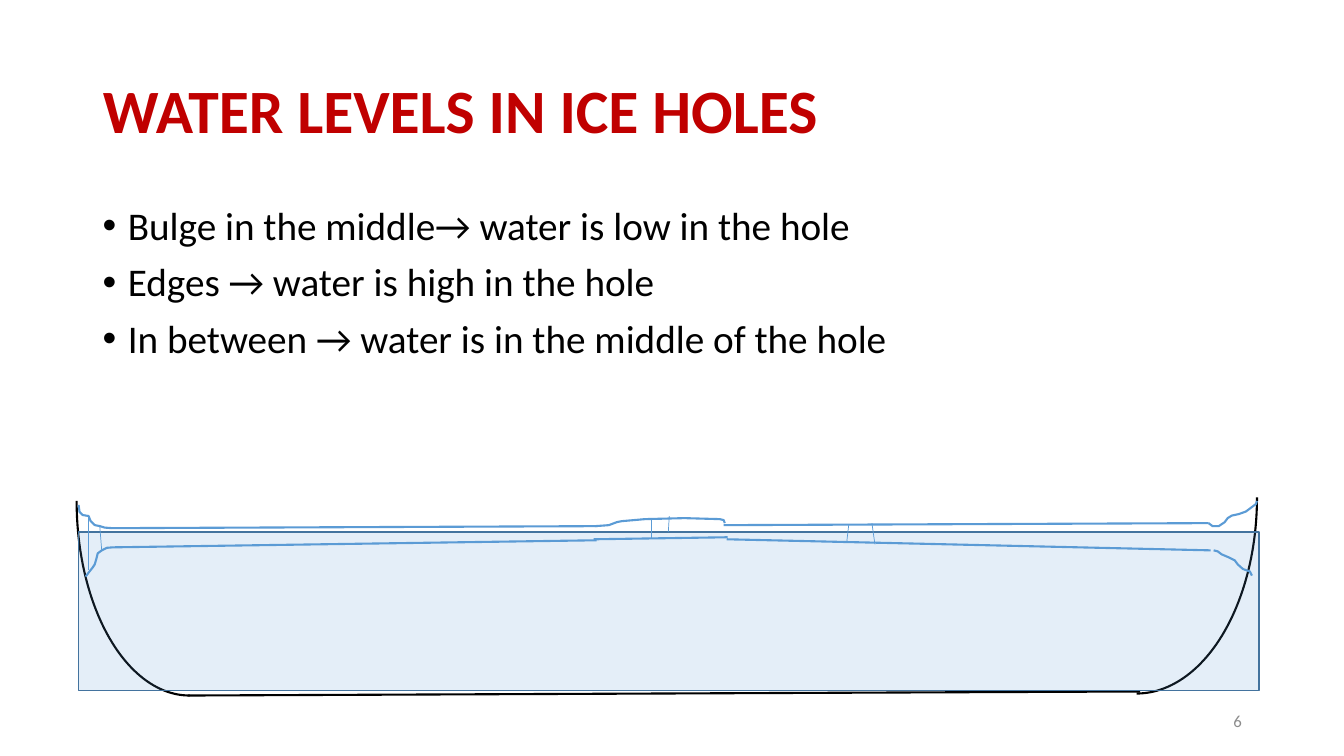
from dataclasses import dataclass

from lxml import etree
from pptx import Presentation, util as u
from pptx.dml.color import RGBColor
from pptx.enum import shapes, text
from pptx.oxml.ns import qn

COLORS = {"title": "C00000", "ink": "000000", "number": "8C8C8C",
          "ice": "5B9BD5", "water_edge": "43739E"}
FONT = "Calibri"
CELL = u.Inches(0.1)  # grid of 0.1 inch columns and rows

Point = tuple[float, float]
Box = tuple[float, float, float, float]


@dataclass
class Arc:
    box: Box
    rotation: int


@dataclass
class Line:
    start: Point
    end: Point
    color: str = "ice"
    weight: float = 1.5


@dataclass
class Outline:
    points: list[Point]


TITLE_BOX: Box = (9.2, 4, 115, 14.5)
BODY_BOX: Box = (9.2, 20, 115, 47.6)
NUMBER_BOX: Box = (94.2, 69.5, 30, 4)
WATER_BOX: Box = (7.8, 52.8, 117.1, 15.7)

BULLETS = ["Bulge in the middle→ water is low in the hole",
           "Edges → water is high in the hole",
           "In between → water is in the middle of the hole"]

BANKS = [Arc((7.6, 30.4, 22.4, 38.6), 180), Arc((93.3, 37.4, 38.9, 23.9), 90)]
LAKE_BED = Line((18.7, 69), (113.1, 68.6), "ink")

ICE_LINES = [
    Line((11.1, 52.4), (59.2, 52.2)), Line((11.2, 54.3), (59.2, 53.6)),
    Line((71.8, 52.1), (119.9, 51.9)), Line((72.1, 53.5), (120.1, 54.6)),
    Line((58.9, 53.5), (72.2, 53.3)),
]
ICE_OUTLINES = [
    # Left edge, top and underside
    Outline([(7.8, 50.1), (7.9, 50.8), (8.2, 51.1), (8.8, 51.2), (9, 51.7),
             (9.4, 52.1), (9.9, 52.2), (10.4, 52.35), (11.1, 52.4)]),
    Outline([(8.5, 57.2), (8.8, 56.8), (9.2, 56.3), (9.4, 56), (9.55, 55.5),
             (9.7, 54.9), (10.1, 54.6), (10.6, 54.35), (11.2, 54.3)]),
    # Right edge, top and underside
    Outline([(119.9, 51.9), (120.3, 52.2), (120.9, 52.2), (121.5, 51.8),
             (121.8, 51.4), (122.2, 51.15), (122.9, 51), (123.6, 50.75),
             (124.2, 50.3), (124.6, 50), (124.7, 49.7)]),
    Outline([(120.4, 54.6), (120.8, 54.7), (121.2, 55), (121.9, 55.3),
             (122.5, 55.6), (122.8, 56), (123.3, 56.45), (124, 56.7),
             (124.2, 57.1)]),
    # Bulge in the middle
    Outline([(59, 52.2), (60.4, 52.1), (61.2, 51.8), (61.7, 51.7),
             (64, 51.5), (67.9, 51.4), (71.4, 51.5), (71.8, 51.6),
             (71.9, 51.9)]),
]
HOLE_SIDES = [Line(start, end, weight=0.5) for start, end in [
    ((8.8, 51.2), (8.8, 56.5)), ((9.9, 52.2), (10.1, 54.7)),
    ((64.6, 51.5), (64.6, 53.5)), ((66.4, 51.2), (66.3, 52.8)),
    ((84.2, 52.1), (84, 53.8)), ((86.5, 51.9), (86.8, 54)),
]]


def grid(values) -> list[u.Emu]:
    return [u.Emu(round(value * CELL)) for value in values]


def apply(target, formats: dict) -> None:
    for name, value in formats.items():
        setattr(target, name, value)


def rgb(color: str) -> RGBColor:
    return RGBColor.from_string(COLORS[color])


def set_font(paragraph, color: str, size: int, bold: bool = False) -> None:
    apply(paragraph.font, {"name": FONT, "size": u.Pt(size), "bold": bold})
    paragraph.font.color.rgb = rgb(color)


def set_line(shape, color: str, weight: float) -> None:
    shape.line.color.rgb = rgb(color)
    shape.line.width = u.Pt(weight)


def add_text_box(slide, box: Box, anchor):
    frame = slide.shapes.add_textbox(*grid(box)).text_frame
    apply(frame, {"word_wrap": True, "vertical_anchor": anchor})
    return frame


def add_title(slide, words: str) -> None:
    title = slide.shapes.title
    apply(title, dict(zip(("left", "top", "width", "height"), grid(TITLE_BOX))))
    frame = title.text_frame
    apply(frame, {"text": words, "word_wrap": True,
                  "auto_size": text.MSO_AUTO_SIZE.NONE,
                  "vertical_anchor": text.MSO_ANCHOR.MIDDLE})
    paragraph = frame.paragraphs[0]
    apply(paragraph, {"alignment": text.PP_ALIGN.LEFT, "line_spacing": 0.9})
    set_font(paragraph, "title", 44, bold=True)


def add_bullets(slide, lines: list[str]) -> None:
    frame = add_text_box(slide, BODY_BOX, text.MSO_ANCHOR.TOP)
    frame.text = "\n".join(lines)
    for index, paragraph in enumerate(frame.paragraphs):
        properties = paragraph._p.get_or_add_pPr()
        properties.set("marL", str(u.Inches(0.25)))
        properties.set("indent", str(-u.Inches(0.25)))
        etree.SubElement(properties, qn("a:buFont")).set("typeface", "Arial")
        etree.SubElement(properties, qn("a:buChar")).set("char", "•")
        apply(paragraph, {"line_spacing": 0.9,
                          "space_before": u.Pt(10 if index else 0)})
        set_font(paragraph, "ink", 28)


def add_number(slide, number: str) -> None:
    frame = add_text_box(slide, NUMBER_BOX, text.MSO_ANCHOR.MIDDLE)
    frame.text = number
    frame.paragraphs[0].alignment = text.PP_ALIGN.RIGHT
    set_font(frame.paragraphs[0], "number", 12)


def add_arc(slide, arc: Arc) -> None:
    shape = slide.shapes.add_shape(shapes.MSO_SHAPE.ARC, *grid(arc.box))
    shape.rotation = arc.rotation
    shape.shadow.inherit = False
    shape.fill.background()
    set_line(shape, "ink", 1.5)


def add_line(slide, line: Line) -> None:
    connector = slide.shapes.add_connector(
        shapes.MSO_CONNECTOR.STRAIGHT, *grid(line.start + line.end))
    set_line(connector, line.color, line.weight)
    etree.SubElement(connector._element.spPr, qn("a:effectLst"))


def add_outline(slide, outline: Outline) -> None:
    start, *others = [grid(point) for point in outline.points]
    builder = slide.shapes.build_freeform(*start)
    builder.add_line_segments(others, close=False)
    shape = builder.convert_to_shape()
    shape.shadow.inherit = False
    shape.fill.background()
    set_line(shape, "ice", 1.5)


def add_water(slide) -> None:
    shape = slide.shapes.add_shape(shapes.MSO_SHAPE.RECTANGLE, *grid(WATER_BOX))
    shape.shadow.inherit = False
    shape.fill.solid()
    shape.fill.fore_color.rgb = rgb("ice")
    color = shape._element.spPr.find(qn("a:solidFill")).find(qn("a:srgbClr"))
    etree.SubElement(color, qn("a:alpha")).set("val", "16000")
    set_line(shape, "water_edge", 1)


def main() -> None:
    presentation = Presentation()
    apply(presentation, {"slide_width": u.Inches(40 / 3),
                         "slide_height": u.Inches(7.5)})
    slide = presentation.slides.add_slide(presentation.slide_layouts[5])

    # Text
    add_title(slide, "WATER LEVELS IN ICE HOLES")
    add_bullets(slide, BULLETS)
    add_number(slide, "6")

    # Lake basin, ice, water and holes, from back to front
    for bank in BANKS:
        add_arc(slide, bank)
    for line in [LAKE_BED, *ICE_LINES]:
        add_line(slide, line)
    for outline in ICE_OUTLINES:
        add_outline(slide, outline)
    add_water(slide)
    for side in HOLE_SIDES:
        add_line(slide, side)

    presentation.save("out.pptx")


if __name__ == "__main__":
    main()
